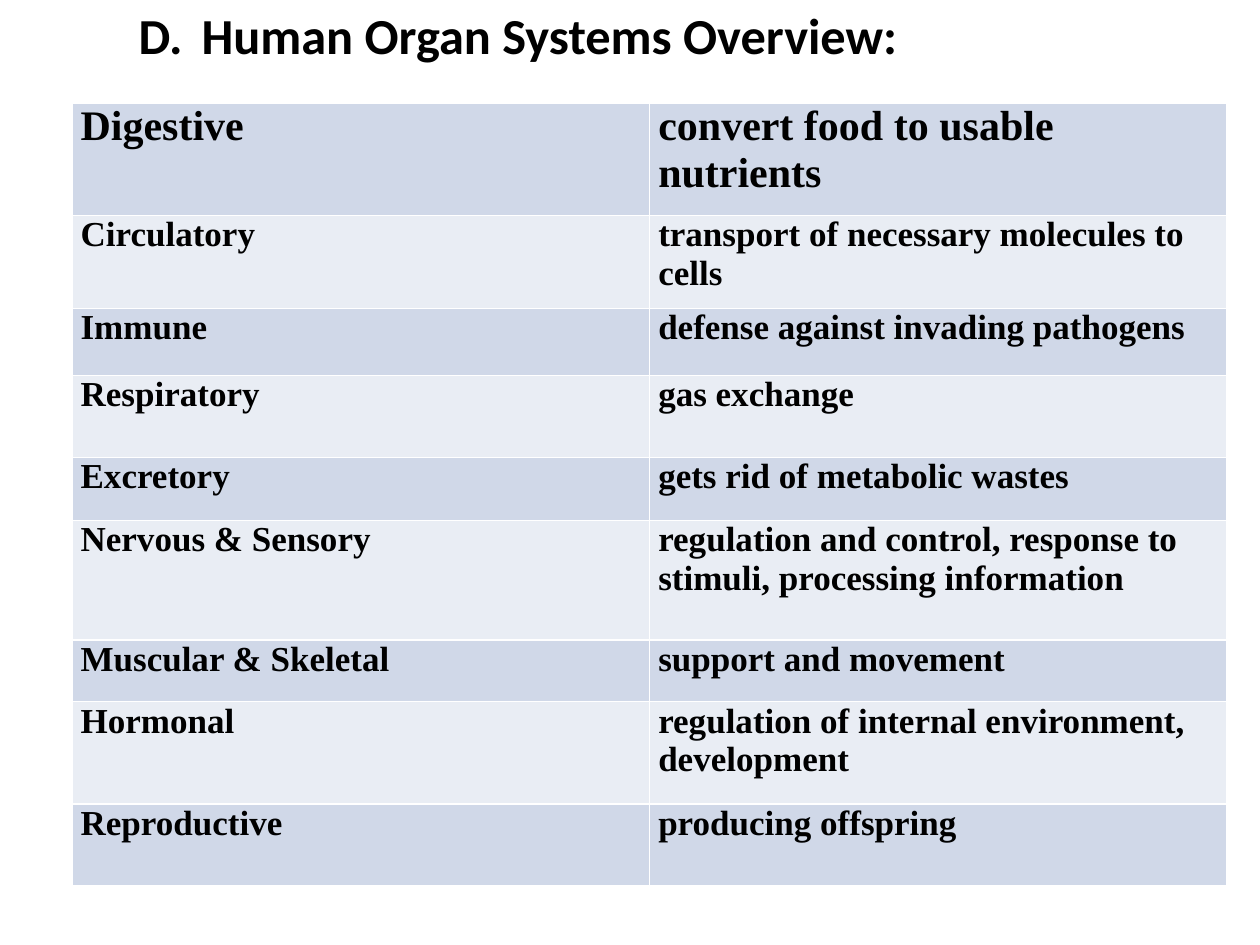
from lxml import etree
from pptx import Presentation
from pptx.dml.color import RGBColor
from pptx.enum.text import MSO_ANCHOR, MSO_AUTO_SIZE, PP_ALIGN
from pptx.oxml.ns import qn
from pptx.util import Inches, Pt

TITLE = "D.\tHuman Organ Systems Overview:"
SYSTEMS = [
    ("Digestive", "convert food to usable nutrients", 0.89),
    ("Circulatory", "transport of necessary molecules to cells", 0.74),
    ("Immune", "defense against invading pathogens", 0.53),
    ("Respiratory", "gas exchange", 0.65),
    ("Excretory", "gets rid of metabolic wastes", 0.5),
    ("Nervous & Sensory", "regulation and control, response to stimuli, processing information", 0.95),
    ("Muscular & Skeletal", "support and movement", 0.49),
    ("Hormonal", "regulation of internal environment, development", 0.81),
    ("Reproductive", "producing offspring", 0.65),
]
THEME = {
    "title_font": "Calibri", "body_font": "Times New Roman",
    "title_size": 28.8, "first_size": 24, "body_size": 20,
    "text": "000000", "bands": ("D0D8E8", "E9EDF4"), "border": "FFFFFF",
}


def format_text(tf, font, size):
    for p in tf.paragraphs:
        p.alignment = PP_ALIGN.LEFT
        for r in p.runs:
            r.font.name = font
            r.font.size = Pt(size)
            r.font.bold = True
            r.font.color.rgb = RGBColor.from_string(THEME["text"])


def add_borders(cell, color, width=1):
    tcPr = cell._tc.get_or_add_tcPr()
    for i, side in enumerate(("a:lnL", "a:lnR", "a:lnT", "a:lnB")):
        ln = etree.Element(qn(side), w=str(Pt(width)))
        fill = etree.SubElement(ln, qn("a:solidFill"))
        etree.SubElement(fill, qn("a:srgbClr"), val=color)
        tcPr.insert(i, ln)


def add_title(s):
    sp = s.shapes.title
    sp.left, sp.top, sp.width, sp.height = map(Inches, (1, 0.15, 8, 0.68))
    tf = sp.text_frame
    tf.text = TITLE
    tf.auto_size = MSO_AUTO_SIZE.NONE
    tf.vertical_anchor = MSO_ANCHOR.MIDDLE
    tf.margin_top, tf.margin_bottom = 0, Inches(0.44)
    format_text(tf, THEME["title_font"], THEME["title_size"])


def add_systems_table(s):
    height = sum(h for _, _, h in SYSTEMS)
    frame = s.shapes.add_table(len(SYSTEMS), 2, Inches(0.57), Inches(0.82),
                               Inches(9.17), Inches(height))
    table = frame.table
    table.first_row = table.horz_banding = False
    for i, (system, role, row_height) in enumerate(SYSTEMS):
        table.rows[i].height = Inches(row_height)
        size = THEME["body_size"] if i else THEME["first_size"]
        for cell, text in zip(table.rows[i].cells, (system, role)):
            cell.text_frame.text = text
            cell.margin_left = cell.margin_right = Inches(0.07)
            cell.margin_top = cell.margin_bottom = 0
            cell.fill.solid()
            cell.fill.fore_color.rgb = RGBColor.from_string(THEME["bands"][i % 2])
            add_borders(cell, THEME["border"])
            format_text(cell.text_frame, THEME["body_font"], size)


def main():
    prs = Presentation()
    prs.slide_width, prs.slide_height = Inches(10), Inches(7.5)
    s = prs.slides.add_slide(prs.slide_layouts[5])
    add_title(s)
    add_systems_table(s)
    prs.save("out.pptx")


if __name__ == "__main__":
    main()
